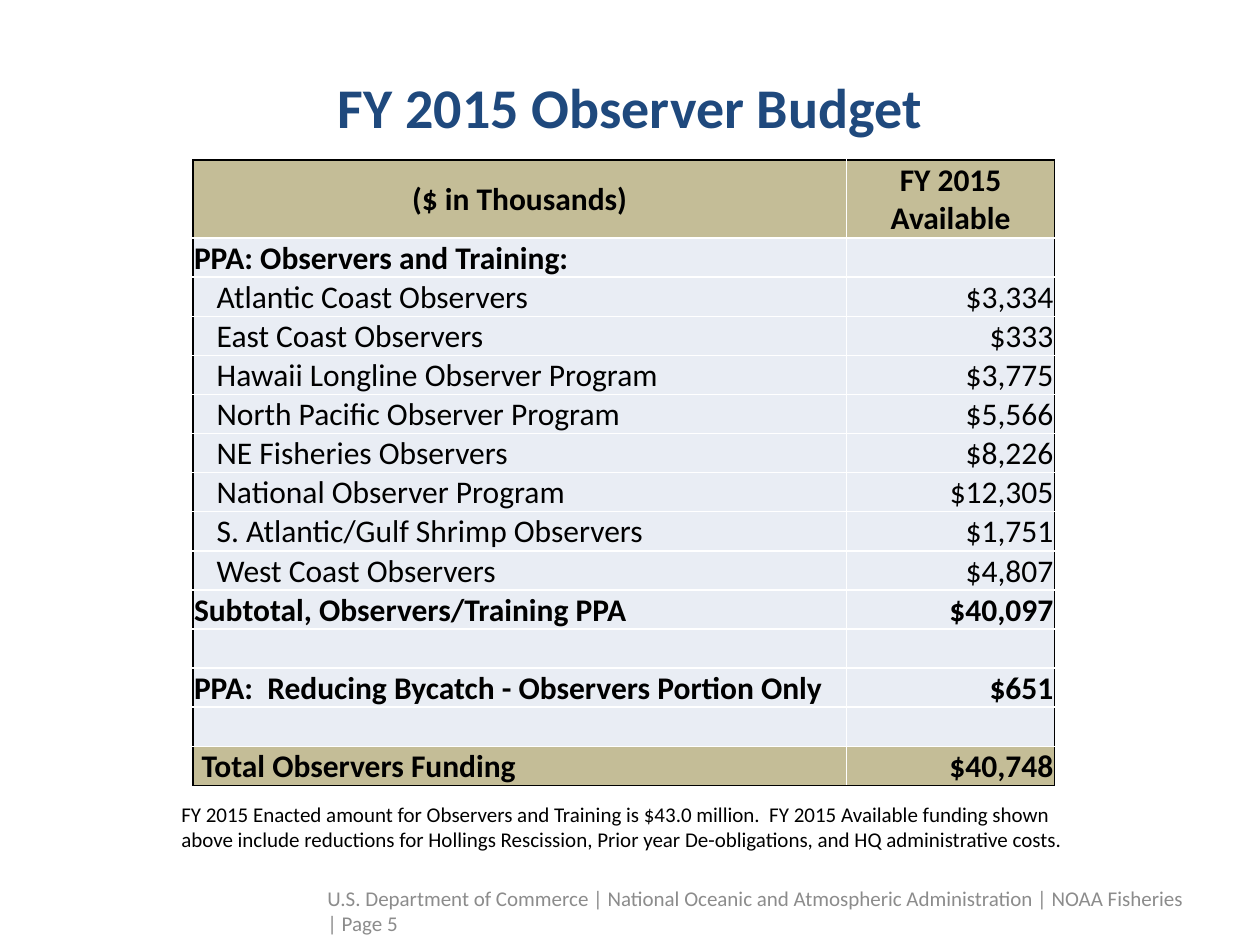
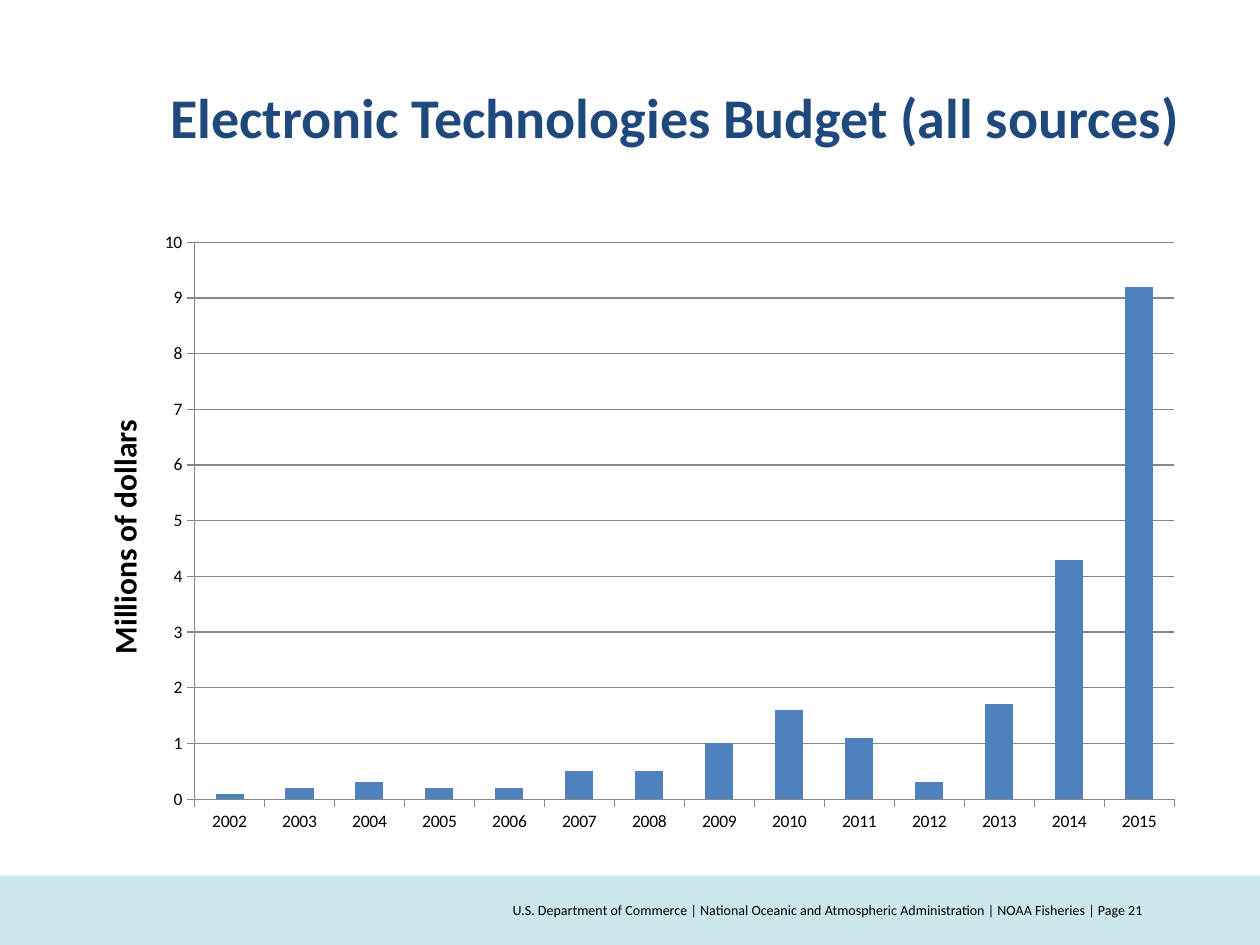
from lxml import etree
from pptx import Presentation
from pptx.chart.data import CategoryChartData
from pptx.dml.color import RGBColor
from pptx.enum.chart import XL_CHART_TYPE, XL_TICK_MARK
from pptx.enum.shapes import MSO_SHAPE
from pptx.enum.text import MSO_ANCHOR, PP_ALIGN
from pptx.oxml.ns import qn
from pptx.util import Inches, Pt

LEFT, CENTER, RIGHT = PP_ALIGN.LEFT, PP_ALIGN.CENTER, PP_ALIGN.RIGHT
TOP, MIDDLE, BOTTOM = MSO_ANCHOR.TOP, MSO_ANCHOR.MIDDLE, MSO_ANCHOR.BOTTOM
COLUMN, RECTANGLE = XL_CHART_TYPE.COLUMN_CLUSTERED, MSO_SHAPE.RECTANGLE
TICK_OUT, TICK_NONE = XL_TICK_MARK.OUTSIDE, XL_TICK_MARK.NONE
TITLE_ONLY = 5

FONT = "Calibri"
NAVY, BLACK, WHITE, GREY = "1F497D", "000000", "FFFFFF", "8C8C8C"
TAN, PALE, AQUA, BLUE, GRID = "C4BD97", "E9EDF4", "CCE7EB", "4F81BD", "878787"
FOOTER = ("U.S. Department of Commerce | National Oceanic and Atmospheric "
          "Administration | NOAA Fisheries | Page {}")
FOOTER_TOP, FOOTER_HEIGHT = 6.95, 0.55

# Label, amount, left inset, bold
BUDGET_ROWS = [
    ("($ in Thousands)", "FY 2015\nAvailable", 0.01, True),
    ("PPA: Observers and Training:", "", 0.01, True),
    ("Atlantic Coast Observers", "$3,334", 0.19, False),
    ("East Coast Observers", "$333", 0.19, False),
    ("Hawaii Longline Observer Program", "$3,775", 0.19, False),
    ("North Pacific Observer Program", "$5,566", 0.19, False),
    ("NE Fisheries Observers", "$8,226", 0.19, False),
    ("National Observer Program", "$12,305", 0.19, False),
    ("S. Atlantic/Gulf Shrimp Observers", "$1,751", 0.19, False),
    ("West Coast Observers", "$4,807", 0.19, False),
    ("Subtotal, Observers/Training PPA", "$40,097", 0.01, True),
    ("", "", 0.01, False),
    ("PPA:  Reducing Bycatch - Observers Portion Only", "$651", 0.01, True),
    ("", "", 0.01, False),
    ("Total Observers Funding", "$40,748", 0.07, True),
]
NOTE = ("FY 2015 Enacted amount for Observers and Training is $43.0 million.  "
        "FY 2015 Available funding shown above include reductions for Hollings "
        "Rescission, Prior year De-obligations, and HQ administrative costs.")
YEARS = [str(year) for year in range(2002, 2016)]
MILLIONS = [0.1, 0.2, 0.3, 0.2, 0.2, 0.5, 0.5, 1, 1.6, 1.1, 0.3, 1.7, 4.3, 9.2]


def rgb(color):
    return RGBColor.from_string(color)


def style_font(font, size, color, bold=False):
    font.name, font.size, font.bold = FONT, Pt(size), bold
    font.color.rgb = rgb(color)


def write(tf, text, size, color, bold=False, align=LEFT):
    for i, line in enumerate(text.split("\n")):
        p = tf.paragraphs[0] if i == 0 else tf.add_paragraph()
        p.alignment = align
        if line:
            r = p.add_run()
            r.text = line
            style_font(r.font, size, color, bold)


def place(sp, left, top, width, height):
    sp.left, sp.top = Inches(left), Inches(top)
    sp.width, sp.height = Inches(width), Inches(height)


def add_titled_slide(prs, text, box, align):
    s = prs.slides.add_slide(prs.slide_layouts[TITLE_ONLY])
    place(s.shapes.title, *box)
    tf = s.shapes.title.text_frame
    tf.vertical_anchor = MIDDLE
    write(tf, text, 32, NAVY, True, align)
    return s


def add_text(s, text, box, size, color, align=LEFT, anchor=TOP, side_inset=0.1):
    tf = s.shapes.add_textbox(*map(Inches, box)).text_frame
    tf.word_wrap = True
    tf.vertical_anchor = anchor
    tf.margin_left = tf.margin_right = Inches(side_inset)
    write(tf, text, size, color, align=align)


def add_footer(s, page, left, width, size, color, align=LEFT, side_inset=0.1):
    add_text(s, FOOTER.format(page), (left, FOOTER_TOP, width, FOOTER_HEIGHT),
             size, color, align, MIDDLE, side_inset)


def add_band(s):
    sp = s.shapes.add_shape(RECTANGLE, 0, Inches(FOOTER_TOP),
                            Inches(10), Inches(FOOTER_HEIGHT))
    sp.shadow.inherit = False
    sp.fill.solid()
    sp.fill.fore_color.rgb = rgb(AQUA)
    sp.line.fill.background()


def set_borders(cell, colors):
    tc_pr = cell._tc.get_or_add_tcPr()
    for side, color in zip("LRTB", colors):
        ln = etree.SubElement(tc_pr, qn(f"a:ln{side}"), w=str(Pt(1)))
        fill = etree.SubElement(ln, qn("a:solidFill"))
        etree.SubElement(fill, qn("a:srgbClr"), val=color)


def format_cell(cell, fill, borders, left_inset, anchor):
    set_borders(cell, borders)
    cell.fill.solid()
    cell.fill.fore_color.rgb = rgb(fill)
    cell.margin_left = Inches(left_inset)
    cell.margin_right = cell.margin_top = Inches(0.01)
    cell.margin_bottom = 0
    cell.vertical_anchor = anchor


def add_budget_table(s):
    last = len(BUDGET_ROWS) - 1
    table = s.shapes.add_table(last + 1, 2, Inches(1.53), Inches(1.27),
                               Inches(6.84), Inches(4.96)).table
    table.first_row = table.horz_banding = False
    for column, width in zip(table.columns, (5.19, 1.65)):
        column.width = Inches(width)
    for i, (label, amount, inset, bold) in enumerate(BUDGET_ROWS):
        table.rows[i].height = Inches(0.62 if i == 0 else 0.31)
        for j, text in enumerate((label, amount)):
            cell = table.cell(i, j)
            outer = (j == 0, j == 1, i == 0, i == last)
            format_cell(cell, TAN if i in (0, last) else PALE,
                        [BLACK if edge else WHITE for edge in outer],
                        inset if j == 0 else 0.01,
                        BOTTOM if i == last else MIDDLE)
            align = CENTER if i == 0 else (LEFT, RIGHT)[j]
            write(cell.text_frame, text, 18, BLACK, bold, align)


def set_layout(parent, index, **values):
    """Give a chart part a fixed place, in fractions of the chart."""
    layout = parent.find(qn("c:layout"))
    if layout is None:
        layout = etree.Element(qn("c:layout"))
        parent.insert(index, layout)
    manual = etree.SubElement(layout, qn("c:manualLayout"))
    if "w" in values:
        etree.SubElement(manual, qn("c:layoutTarget"), val="inner")
    for mode in ("xMode", "yMode"):
        etree.SubElement(manual, qn(f"c:{mode}"), val="edge")
    for key, value in values.items():
        etree.SubElement(manual, qn(f"c:{key}"), val=str(value))


def style_line(line):
    line.color.rgb = rgb(GRID)
    line.width = Pt(0.75)


def add_budget_chart(s):
    data = CategoryChartData()
    data.categories = YEARS
    data.add_series("Series 1", MILLIONS)
    chart = s.shapes.add_chart(COLUMN, Inches(0.5), Inches(1.75),
                               Inches(9), Inches(4.95), data).chart
    chart.has_legend = chart.has_title = False
    style_font(chart.font, 10, BLACK)

    # Columns
    plot = chart.plots[0]
    plot.gap_width = 150
    plot.vary_by_categories = False
    fill = plot.series[0].format.fill
    fill.solid()
    fill.fore_color.rgb = rgb(BLUE)

    # Axes
    values = chart.value_axis
    for axis in (chart.category_axis, values):
        axis.major_tick_mark, axis.minor_tick_mark = TICK_OUT, TICK_NONE
        style_line(axis.format.line)
    values.minimum_scale, values.maximum_scale, values.major_unit = 0, 10, 1
    values.has_major_gridlines = True
    style_line(values.major_gridlines.format.line)
    write(values.axis_title.text_frame, "Millions of dollars", 18, BLACK, True)

    # Placement
    set_layout(values.axis_title.element, 1, x=0.03, y=0.31)
    plot_area = chart.element.find(".//" + qn("c:plotArea"))
    set_layout(plot_area, 0, x=0.116, y=0.035, w=0.864, h=0.893)


def main():
    prs = Presentation()
    prs.slide_width, prs.slide_height = Inches(10), Inches(7.5)

    # Observer budget
    s = add_titled_slide(prs, "FY 2015 Observer Budget",
                         (0.5, 0.47, 9, 0.74), CENTER)
    add_footer(s, 5, 2.5, 7, 12, GREY)
    add_budget_table(s)
    add_text(s, NOTE, (1.34, 6.31, 7.41, 0.5), 12, BLACK)

    # Electronic technologies budget
    s = add_titled_slide(prs, "Electronic Technologies Budget (all sources)",
                         (1.25, 0.3, 9, 1.25), LEFT)
    add_band(s)
    add_footer(s, 21, 1.83, 7.25, 8, BLACK, RIGHT, 0)
    add_budget_chart(s)

    prs.save("out.pptx")


if __name__ == "__main__":
    main()
